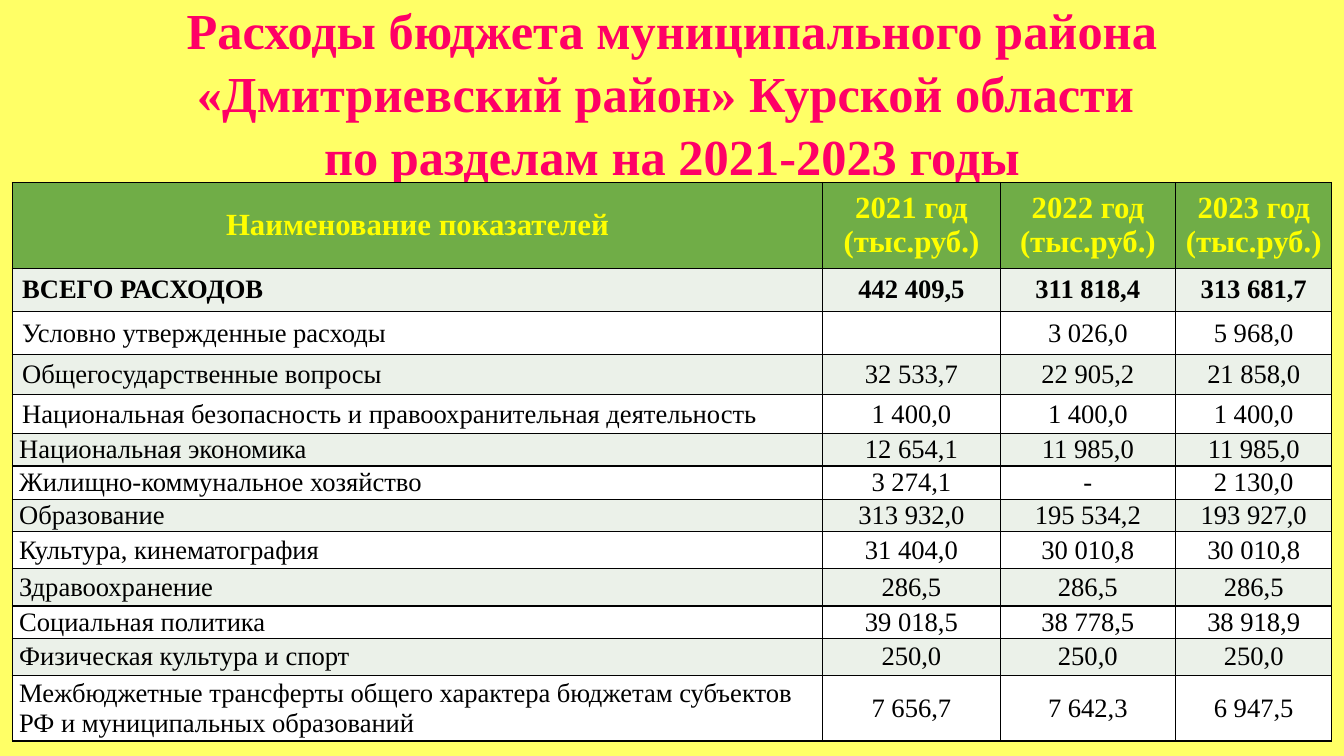
from lxml.etree import SubElement
from pptx import Presentation
from pptx.dml.color import RGBColor
from pptx.enum.text import MSO_ANCHOR, MSO_AUTO_SIZE, PP_ALIGN
from pptx.oxml.ns import qn
from pptx.util import Inches, Pt

HUES = {"back": "FFFF66", "title": "FF0066", "head": "70AD47", "year": "FFFF00",
        "text": "000000", "band": "EBF1E9", "plain": "FFFFFF", "line": "000000"}
TITLE = ("Расходы бюджета муниципального района «Дмитриевский район» Курской области ",
         "по разделам на 2021-2023 годы")
COLS = (8.04, 1.76, 1.74, 1.55)
ROWS = (
    (0.85, "Наименование показателей", "2021 год (тыс.руб.)", "2022 год (тыс.руб.)", "2023 год (тыс.руб.)"),
    (0.43, "ВСЕГО РАСХОДОВ", "442 409,5", "311 818,4", "313 681,7"),
    (0.43, "Условно утвержденные расходы", "", "3 026,0", "5 968,0"),
    (0.39, "Общегосударственные вопросы", "32 533,7", "22 905,2", "21 858,0"),
    (0.36, "Национальная безопасность и правоохранительная деятельность", "1 400,0", "1 400,0", "1 400,0"),
    (0.32, "Национальная экономика", "12 654,1", "11 985,0", "11 985,0"),
    (0.33, "Жилищно-коммунальное хозяйство", "3 274,1", "-", "2 130,0"),
    (0.32, "Образование", "313 932,0", "195 534,2", "193 927,0"),
    (0.37, "Культура, кинематография", "31 404,0", "30 010,8", "30 010,8"),
    (0.37, "Здравоохранение", "286,5", "286,5", "286,5"),
    (0.32, "Социальная политика", "39 018,5", "38 778,5", "38 918,9"),
    (0.37, "Физическая культура и спорт", "250,0", "250,0", "250,0"),
    (0.65, "Межбюджетные трансферты общего характера бюджетам субъектов РФ и муниципальных образований",
     "7 656,7", "7 642,3", "6 947,5"),
)
WIDE = 5


def color(name):
    """Return the named colour."""
    return RGBColor.from_string(HUES[name])


def apply(item, form):
    """Set every attribute of the format on the item."""
    for key, value in form.items():
        setattr(item, key, value)


def style(font, size, hue, bold):
    """Format a font."""
    apply(font, {"name": "Times New Roman", "size": Pt(size), "bold": bold})
    font.color.rgb = color(hue)


def frame(cell):
    """Draw thin lines on all four sides of a cell."""
    props = cell._tc.get_or_add_tcPr()
    for spot, side in enumerate(("lnL", "lnR", "lnT", "lnB")):
        line = SubElement(props, qn(f"a:{side}"), w=str(Pt(1)))
        fill = SubElement(line, qn("a:solidFill"))
        SubElement(fill, qn("a:srgbClr"), val=HUES["line"])
        props.insert(spot, line)


def add_title(slide):
    """Fill and place the slide title."""
    title = slide.shapes.title
    apply(title, {"left": 0, "top": 0, "width": Inches(13.33), "height": Inches(1.81)})
    apply(title.text_frame, {"word_wrap": True, "auto_size": MSO_AUTO_SIZE.NONE,
                             "vertical_anchor": MSO_ANCHOR.MIDDLE})
    para = title.text_frame.paragraphs[0]
    apply(para, {"alignment": PP_ALIGN.CENTER, "line_spacing": 1.04})
    for index, text in enumerate(TITLE):
        if index:
            para.add_line_break()
        run = para.add_run()
        run.text = text
        style(run.font, 36, "title", True)


def fill_cell(cell, text, row, col):
    """Write one cell in the format of its row and column."""
    cell.fill.solid()
    cell.fill.fore_color.rgb = color("head" if row == 0 else "band" if row % 2 else "plain")
    cell.vertical_anchor = MSO_ANCHOR.MIDDLE
    if row >= WIDE or row and col:
        apply(cell, {"margin_left": Inches(0.07), "margin_right": Inches(0.07),
                     "margin_top": 0, "margin_bottom": 0})
    para = cell.text_frame.paragraphs[0]
    para.alignment = PP_ALIGN.LEFT if row and not col else PP_ALIGN.CENTER
    if text:
        run = para.add_run()
        run.text = text
        style(run.font, 19 if row else 22, "text" if row else "year", row < 2)
    frame(cell)


def add_budget(slide):
    """Add the table of spending by section."""
    table = slide.shapes.add_table(len(ROWS), len(COLS), Inches(0.12), Inches(1.81),
                                   Inches(13.09), Inches(5.62)).table
    for col, width in enumerate(COLS):
        table.columns[col].width = Inches(width)
    for row, (height, *texts) in enumerate(ROWS):
        table.rows[row].height = Inches(height)
        for col, text in enumerate(texts):
            fill_cell(table.cell(row, col), text, row, col)


def main():
    """Build and save the slide."""
    deck = Presentation()
    apply(deck, {"slide_width": Inches(13.33), "slide_height": Inches(7.5)})
    slide = deck.slides.add_slide(deck.slide_layouts[5])
    slide.background.fill.solid()
    slide.background.fill.fore_color.rgb = color("back")
    add_title(slide)
    add_budget(slide)
    deck.save("out.pptx")


if __name__ == "__main__":
    main()
